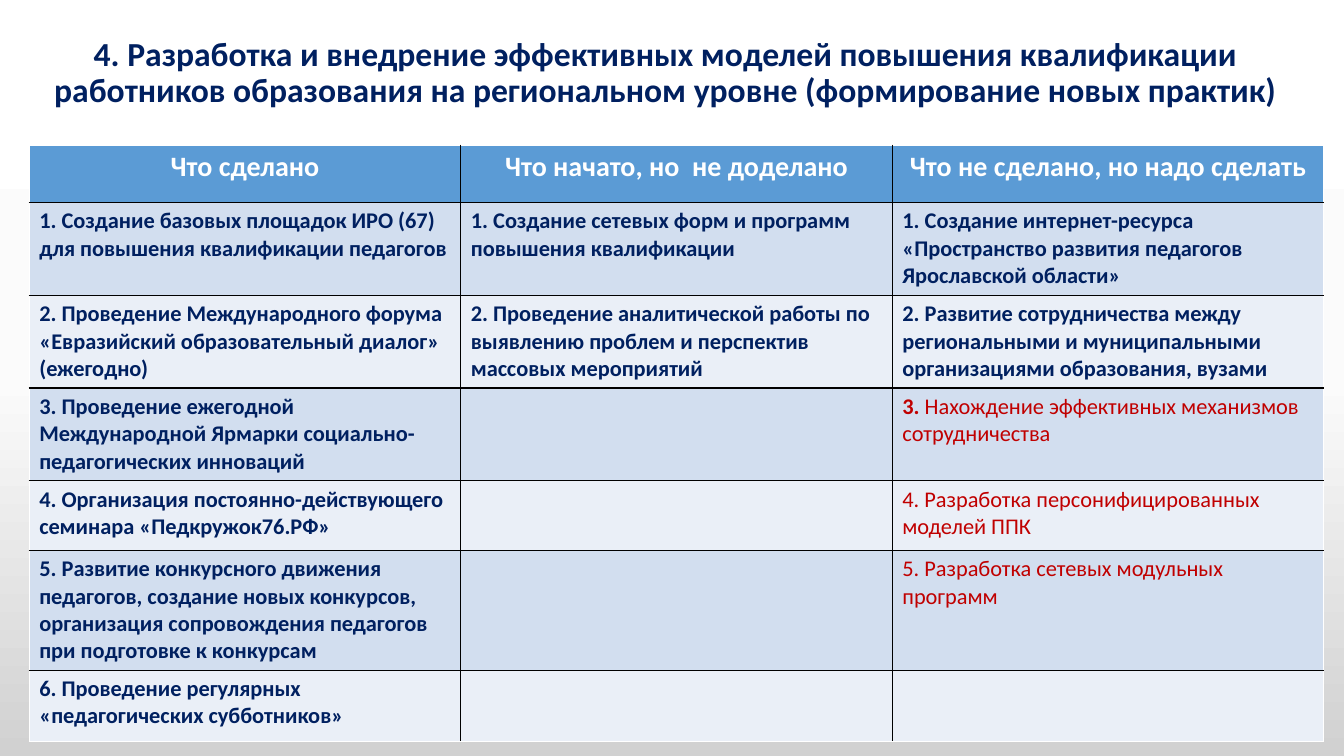
import copy

import lxml.etree
import pptx
import pptx.dml.color
import pptx.enum.text
import pptx.oxml.ns
import pptx.util

TITLE = ("4. Разработка и внедрение эффективных моделей повышения квалификации "
         "работников образования на региональном уровне (формирование новых практик)")
HEADINGS = ["Что сделано", "Что начато, но  не доделано", "Что не сделано, но надо сделать"]
DONE = [
    "1. Создание базовых площадок ИРО (67) для повышения квалификации педагогов",
    "2. Проведение Международного форума «Евразийский образовательный диалог» (ежегодно)",
    "3. Проведение ежегодной Международной Ярмарки социально-педагогических инноваций",
    "4. Организация постоянно-действующего семинара «Педкружок76.РФ»",
    "5. Развитие конкурсного движения педагогов, создание новых конкурсов, "
    "организация сопровождения педагогов при подготовке к конкурсам",
    "6. Проведение регулярных «педагогических субботников»",
]
STARTED = [
    "1. Создание сетевых форм и программ повышения квалификации",
    "2. Проведение аналитической работы по выявлению проблем и перспектив массовых мероприятий",
    "", "", "", "",
]
# A tuple holds a bold lead and the plain words after it
TO_DO = [
    "1. Создание интернет-ресурса «Пространство развития педагогов Ярославской области»",
    "2. Развитие сотрудничества между региональными и муниципальными "
    "организациями образования, вузами",
    ("3. ", "Нахождение эффективных механизмов сотрудничества"),
    ("", "4. Разработка персонифицированных моделей ППК"),
    ("", "5. Разработка сетевых модульных программ"),
    "",
]
ROWS = [HEADINGS] + list(zip(DONE, STARTED, TO_DO))
ROW_HEIGHTS = [0.57, 0.92, 0.92, 0.92, 0.69, 1.19, 0.71]
COLUMN_WIDTH = 4.28
COLORS = {"navy": "002060", "red": "C00000", "white": "FFFFFF", "black": "000000",
          "header": "5B9BD5", "odd": "D2DEEF", "even": "EAEFF7"}
BACKGROUND = [(0, "FFFFFF"), (0.5, "FBFBFB"), (1, "D1D1D1")]

Inches, Pt = pptx.util.Inches, pptx.util.Pt
rgb = pptx.dml.color.RGBColor.from_string
qn = pptx.oxml.ns.qn
CENTER = pptx.enum.text.PP_ALIGN.CENTER


def add_run(paragraph, text, size, color, bold=True):
    run = paragraph.add_run()
    run.text = text
    run.font.name = "Calibri"
    run.font.size = Pt(size)
    run.font.bold = bold
    run.font.color.rgb = rgb(COLORS[color])


def set_borders(cell, side_colors):
    properties = cell._tc.get_or_add_tcPr()
    for index, (side, color) in enumerate(side_colors.items()):
        line = lxml.etree.Element(qn("a:ln" + side), w=str(Pt(1)))
        fill = lxml.etree.SubElement(line, qn("a:solidFill"))
        lxml.etree.SubElement(fill, qn("a:srgbClr"), val=COLORS[color])
        properties.insert(index, line)


presentation = pptx.Presentation()
presentation.slide_width = Inches(13.33)
presentation.slide_height = Inches(7.5)
slide = presentation.slides.add_slide(presentation.slide_layouts[6])

# Background gradient, top to bottom
backdrop = slide.background.fill
backdrop.gradient()
backdrop.gradient_angle = 270
stop_list = slide.background._cSld.find(".//" + qn("a:gsLst"))
stop_list.append(copy.deepcopy(stop_list[-1]))
for stop, (position, color) in zip(backdrop.gradient_stops, BACKGROUND):
    stop.position = position
    stop.color.rgb = rgb(color)

# Title
title = slide.shapes.add_textbox(Inches(0.23), Inches(0.16), Inches(12.74), Inches(1.14))
title.text_frame.word_wrap = True
title.text_frame.vertical_anchor = pptx.enum.text.MSO_ANCHOR.MIDDLE
heading = title.text_frame.paragraphs[0]
heading.alignment = CENTER
heading.line_spacing = 0.9
add_run(heading, TITLE, 24, "navy")

# Table: black inner lines, white outer edge
last_row, last_column = len(ROWS) - 1, len(HEADINGS) - 1
progress = slide.shapes.add_table(
    len(ROWS), len(HEADINGS), Inches(0.29), Inches(1.44),
    Inches(COLUMN_WIDTH * len(HEADINGS)), Inches(sum(ROW_HEIGHTS))).table
for column in progress.columns:
    column.width = Inches(COLUMN_WIDTH)
for r, (entries, height) in enumerate(zip(ROWS, ROW_HEIGHTS)):
    progress.rows[r].height = Inches(height)
    band = "header" if r == 0 else "odd" if r % 2 else "even"
    for c, entry in enumerate(entries):
        cell = progress.cell(r, c)
        cell.fill.solid()
        cell.fill.fore_color.rgb = rgb(COLORS[band])
        on_edge = {"L": c == 0, "R": c == last_column, "T": r == 0, "B": r == last_row}
        set_borders(cell, {side: "white" if edge else "black" for side, edge in on_edge.items()})
        paragraph = cell.text_frame.paragraphs[0]
        if r == 0:
            paragraph.alignment = CENTER
            add_run(paragraph, entry, 20, "white")
        elif isinstance(entry, tuple):
            lead, words = entry
            if lead:
                add_run(paragraph, lead, 16, "red")
            add_run(paragraph, words, 16, "red", bold=False)
        elif entry:
            add_run(paragraph, entry, 16, "navy")

presentation.save("out.pptx")
